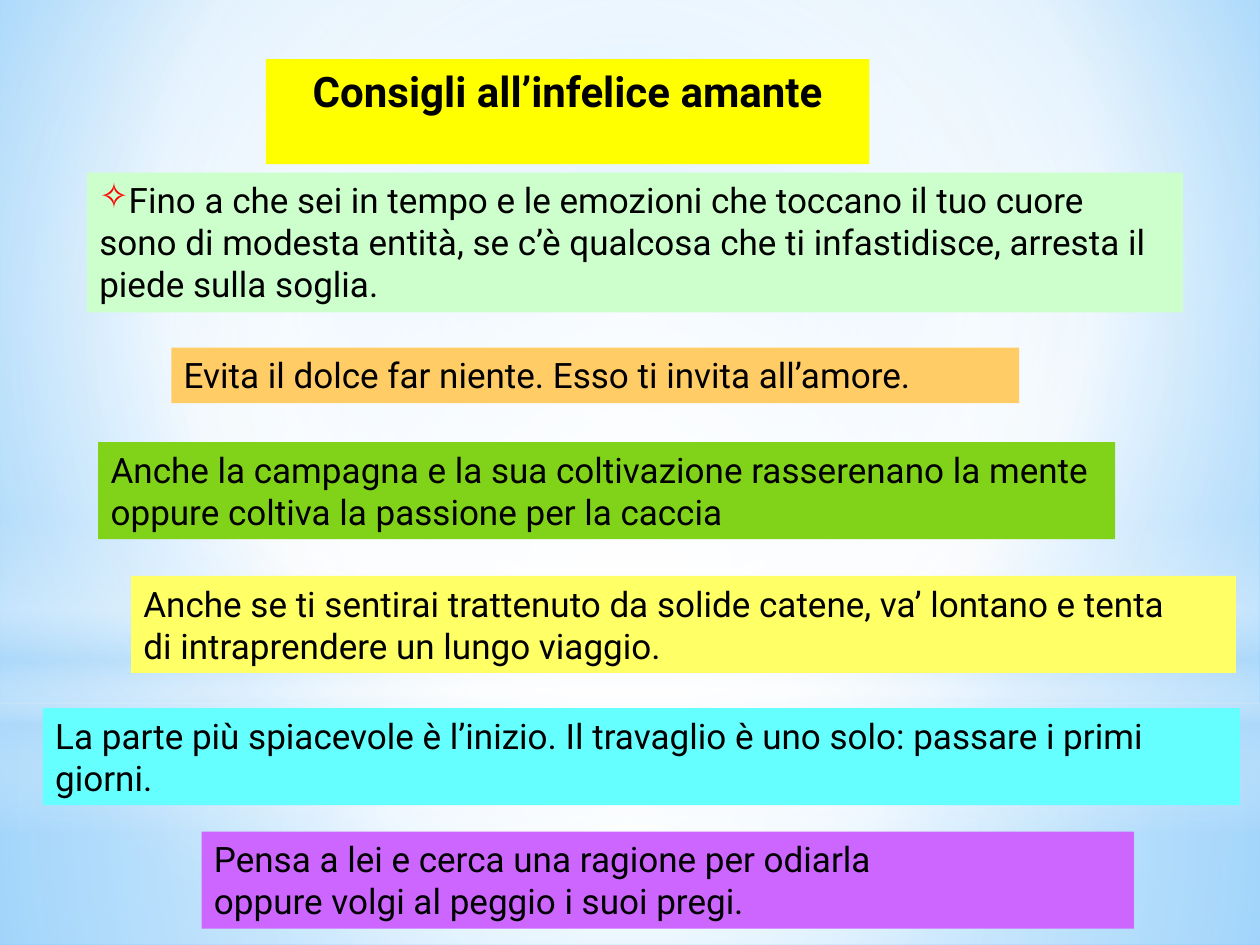
from pptx import Presentation
from pptx.dml.color import RGBColor
from pptx.enum import shapes, text
from pptx.oxml import parse_xml
from pptx.oxml.ns import nsdecls, qn
from pptx.util import Inches, Pt

FONT = "Roboto"
CENTRE = (50, 50, 50, 50)
RECT, OVAL = shapes.MSO_SHAPE.RECTANGLE, shapes.MSO_SHAPE.OVAL

# Gradient stops: position, colour, opacity (all in percent)
SKY = [(0, "9ED5FF", 100), (60, "FFFFFF", 100), (100, "5BB9FF", 100)]
# Backdrop: preset, box, stops, focus rectangle (None means a vertical gradient)
BACKDROP = [
    (RECT, (0, 5.58, 10, 1.92),
     [(0, "FFFFFF", 91), (37, "FFFFFF", 76), (100, "B4DCFA", 79)], CENTRE),
    (RECT, (0, 0, 10, 5.58),
     [(0, "FFFFFF", 89), (48, "FFFFFF", 62), (100, "B4DCFA", 79)], CENTRE),
    (RECT, (0, 4.12, 10, 2.5),
     [(0, "FFFFFF", 0), (29, "FFFFFF", 30), (45, "B4DCFA", 40),
      (55, "FFFFFF", 26), (65, "B4DCFA", 60), (100, "FFFFFF", 0)], None),
    (OVAL, (0, 1.75, 10, 5.58), [(0, "FFFFFF", 100), (56, "FFFFFF", 0)], CENTRE),
]

TITLE = ("Consigli all’infelice amante", (2.11, 0.47, 4.79, 0.5), "FFFF00")
# Advice: text, box, fill
ADVICE = [
    ("Fino a che sei in tempo e le emozioni che toccano il tuo cuore sono di modesta "
     "entità, se c’è qualcosa che ti infastidisce, arresta il piede sulla soglia.",
     (0.69, 1.37, 8.7, 1.11), "CCFFCC"),
    ("Evita il dolce far niente. Esso ti invita all’amore.",
     (1.36, 2.76, 6.73, 0.44), "FFCC66"),
    ("Anche la campagna e la sua coltivazione rasserenano la mente\n"
     "oppure coltiva la passione per la caccia",
     (0.78, 3.51, 8.07, 0.77), "81D31A"),
    ("Anche se ti sentirai trattenuto da solide catene, va’ lontano e tenta\n"
     "di intraprendere un lungo viaggio.",
     (1.04, 4.57, 8.77, 0.77), "FFFF66"),
    ("La parte più spiacevole è l’inizio. Il travaglio è uno solo: "
     "passare i primi giorni.",
     (0.34, 5.62, 9.5, 0.77), "66FFFF"),
    ("Pensa a lei e cerca una ragione per odiarla\noppure volgi al peggio i suoi pregi.",
     (1.6, 6.6, 7.4, 0.77), "CC66FF"),
]


def rgb(value):
    return RGBColor.from_string(value)


def set_gradient(fill, parent, stops, focus):
    """Give parent (bgPr or spPr) a gradient in place of a solid fill."""
    fill.solid()
    marks = "".join(
        f'<a:gs pos="{pos * 1000}"><a:srgbClr val="{colour}">'
        f'<a:alpha val="{opacity * 1000}"/></a:srgbClr></a:gs>'
        for pos, colour, opacity in stops)
    if focus:
        sides = " ".join(f'{side}="{v * 1000}"' for side, v in zip("ltrb", focus))
        course = f'<a:path path="circle"><a:fillToRect {sides}/></a:path>'
    else:
        course = '<a:lin ang="5400000" scaled="0"/>'
    gradient = parse_xml(f'<a:gradFill {nsdecls("a")} rotWithShape="1">'
                         f'<a:gsLst>{marks}</a:gsLst>{course}</a:gradFill>')
    parent.replace(parent.find(qn("a:solidFill")), gradient)


def format_box(sp, content, box, colour, size, bold, align):
    sp.left, sp.top, sp.width, sp.height = map(Inches, box)
    sp.fill.solid()
    sp.fill.fore_color.rgb = rgb(colour)
    tf = sp.text_frame
    tf.text = content
    tf.word_wrap = True
    tf.auto_size = text.MSO_AUTO_SIZE.SHAPE_TO_FIT_TEXT
    tf.vertical_anchor = text.MSO_ANCHOR.TOP
    for p in tf.paragraphs:
        p.alignment = align
        for r in p.runs:
            r.font.name, r.font.size, r.font.bold = FONT, Pt(size), bold
            r.font.color.rgb = rgb("000000")


def add_bullet(p, char, colour):
    pPr = p._p.get_or_add_pPr()
    pPr.append(parse_xml(f'<a:buClr {nsdecls("a")}><a:srgbClr val="{colour}"/></a:buClr>'))
    pPr.append(parse_xml(f'<a:buChar {nsdecls("a")} char="{char}"/>'))


prs = Presentation()
prs.slide_width, prs.slide_height = Inches(10), Inches(7.5)
s = prs.slides.add_slide(prs.slide_layouts[5])

# Background and light effects
bg_fill = s.background.fill
bg_fill.solid()
set_gradient(bg_fill, s._element.find(".//" + qn("p:bgPr")), SKY, (20, 10, 20, 60))
for preset, box, stops, focus in BACKDROP:
    sp = s.shapes.add_shape(preset, *map(Inches, box))
    sp.shadow.inherit = False
    sp.line.fill.background()
    set_gradient(sp.fill, sp._element.spPr, stops, focus)

# Title, brought in front of the backdrop
title = s.shapes.title
s.shapes._spTree.append(title._element)
format_box(title, *TITLE, 24, True, text.PP_ALIGN.CENTER)

# Advice boxes, the first one with a star bullet
boxes = []
for content, box, colour in ADVICE:
    sp = s.shapes.add_textbox(*map(Inches, box))
    format_box(sp, content, box, colour, 20, False, text.PP_ALIGN.LEFT)
    boxes.append(sp)
add_bullet(boxes[0].text_frame.paragraphs[0], "✧", "FF0000")

prs.save("out.pptx")
